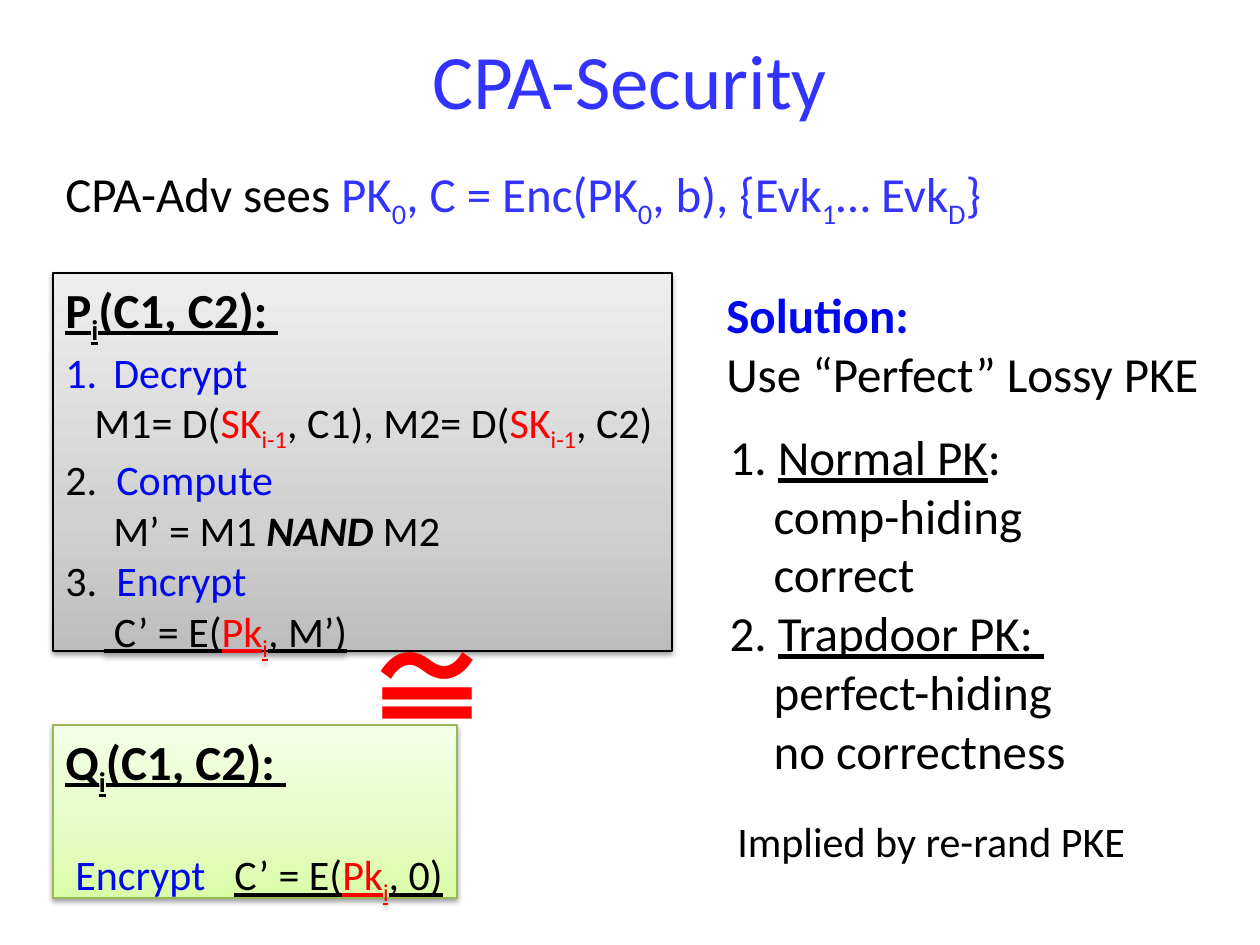
"""Build the CPA-Security slide with its two programs and the lossy PKE solution."""
from lxml import etree
from pptx import Presentation
from pptx import util as u
from pptx.dml.color import RGBColor
from pptx.enum import shapes, text
from pptx.oxml.ns import qn

PX = 914400 / 126
BLACK = RGBColor(0x00, 0x00, 0x00)
VIOLET = RGBColor(0x33, 0x33, 0xFF)
BLUE = RGBColor(0x02, 0x08, 0xEE)
RED = RGBColor(0xFF, 0x00, 0x00)
LEAF = RGBColor(0x98, 0xB9, 0x55)
GREYS = [(0, "BDBDBD"), (35, "D1D1D1"), (100, "EEEEEE")]
GREENS = [(0, "DAFDA7"), (35, "E4FCC2"), (100, "F5FFE7")]
INKS = {"v": VIOLET, "b": BLUE, "r": RED}
WIDE_SPACING = 1110

# Span marks: v, b, r = ink; s = subscript; B = bold; i = italic; u = underline; w = wide
TITLE = [dict(spans=[("CPA-Security", "v")], size=44, align=text.PP_ALIGN.CENTER)]
VIEW = [dict(spans=[("CPA-Adv sees", ""), (" PK", "v"), ("0", "vs"), (", C = Enc(PK", "v"),
                    ("0", "vs"), (", b), {Evk", "v"), ("1", "vs"), ("… Evk", "v"),
                    ("D", "vs"), ("}", "v")])]
SOLUTION = [dict(spans=[("Solution:", "bB")]),
            dict(spans=[("Use “Perfect” Lossy PKE", "")])]
KEYS = [dict(spans=[("1. ", ""), ("Normal PK", "u"), (":", "")]),
        dict(spans=[("comp-hiding", "")], left=44),
        dict(spans=[("correct", "")], left=44),
        dict(spans=[("2. ", ""), ("Trapdoor PK: ", "u")]),
        dict(spans=[("perfect-hiding", "")], left=44),
        dict(spans=[("no correctness", "")], left=44)]
REMARK = [dict(spans=[("Implied by re-rand PKE", "")], size=24)]
PROGRAM_P = [
    dict(spans=[("P", "Bu"), ("i", "Bus"), ("(C1, C2): ", "Bu")]),
    dict(spans=[("Decrypt", "b")], size=24, left=48, first=-48, numbered=True),
    dict(spans=[("M1= D(", ""), ("SK", "r"), ("i-1", "rs"), (", C1), M2= D(", ""),
                ("SK", "r"), ("i-1", "rs"), (", C2)", "")], size=24, left=29),
    dict(spans=[("2.\t", ""), ("Compute", "b")], size=24, left=51, first=-51),
    dict(spans=[("M’ = M1 ", ""), ("NAND", "Bi"), (" M2", "")], size=24, left=48),
    dict(spans=[("3.\t", ""), ("Encrypt", "b")], size=24, left=51, first=-51),
    dict(spans=[(" C’ = E(", "u"), ("Pk", "ru"), ("i", "rus"), (", M’)", "u")],
         size=24, left=39)]
PROGRAM_Q = [
    dict(spans=[("Q", "Bu"), ("i", "Bus"), ("(C1, C2): ", "Bu")]),
    dict(spans=[("Encrypt", "b"), (" ", "w"), ("C’ = E(", "u"), ("Pk", "ru"),
                ("i", "rus"), (", 0)", "u")], size=24, left=10, before=29)]
RELATION = [dict(spans=[("≅", "rB")], size=72, font="Noto Sans CJK JP")]

TEXT_BOXES = [((53, 157, 1207, 72), VIEW, True), ((714, 278, 503, 131), SOLUTION, True),
              ((725, 809, 418, 63), REMARK, True)]
PROGRAMS = [((53, 273, 619, 378), PROGRAM_P, GREYS, BLACK),
            ((53, 725, 404, 173), PROGRAM_Q, GREENS, LEAF)]


def px(length):
    return u.Emu(round(length * PX))


def child(parent, tag, **values):
    return etree.SubElement(parent, qn(tag), {key: str(value) for key, value in values.items()})


def add_para(para, spans, size=28, font="Calibri", align=text.PP_ALIGN.LEFT,
             left=0, first=0, before=0, numbered=False):
    para.alignment = align
    para.space_before = u.Pt(before)
    layout = para._p.get_or_add_pPr()
    layout.set("marL", str(px(left)))
    layout.set("indent", str(px(first)))
    if numbered:
        child(layout, "a:buFont", typeface="+mj-lt")
        child(layout, "a:buAutoNum", type="arabicPeriod")
    else:
        child(layout, "a:buNone")
    for words, marks in spans:
        span = para.add_run()
        span.text = words
        span.font.size = u.Pt(size)
        span.font.bold = "B" in marks
        span.font.italic = "i" in marks
        span.font.underline = "u" in marks
        span.font.color.rgb = next((INKS[mark] for mark in marks if mark in INKS), BLACK)
        span.font.name = font
        child(span.font._element, "a:ea", typeface=font)
        if "s" in marks:
            span.font._element.set("baseline", "-25000")
        if "w" in marks:
            span.font._element.set("spc", str(WIDE_SPACING))


def write(box, paras, wrap=True, anchor=text.MSO_ANCHOR.TOP):
    frame = box.text_frame
    frame.word_wrap = wrap
    frame.auto_size = text.MSO_AUTO_SIZE.NONE if wrap else text.MSO_AUTO_SIZE.SHAPE_TO_FIT_TEXT
    frame.vertical_anchor = anchor
    for index, content in enumerate(paras):
        add_para(frame.add_paragraph() if index else frame.paragraphs[0], **content)


def place(box, area):
    box.left, box.top, box.width, box.height = map(px, area)


def add_program(page, area, paras, stops, edge):
    box = page.shapes.add_shape(shapes.MSO_SHAPE.RECTANGLE, *map(px, area))
    box.line.color.rgb = edge
    box.line.width = u.Pt(0.75)
    box.fill.gradient()
    box.fill.gradient_angle = 90
    ramp = box._element.spPr.find(".//" + qn("a:gsLst"))
    for stop in list(ramp):
        ramp.remove(stop)
    for position, colour in stops:
        child(child(ramp, "a:gs", pos=position * 1000), "a:srgbClr", val=colour)
    box.shadow.inherit = False
    effects = box._element.spPr.find(qn("a:effectLst"))
    shade = child(effects, "a:outerShdw", blurRad=u.Pt(3.1), dist=u.Pt(1.6),
                  dir=5400000, rotWithShape=0)
    child(child(shade, "a:srgbClr", val="000000"), "a:alpha", val=38000)
    box.text_frame.margin_right = 0
    write(box, paras)


def main():
    deck = Presentation()
    deck.slide_width, deck.slide_height = px(1260), px(945)
    page = deck.slides.add_slide(deck.slide_layouts[1])
    title, body = page.placeholders
    place(title, (63, 0, 1134, 158))
    write(title, TITLE, anchor=text.MSO_ANCHOR.MIDDLE)
    place(body, (717, 420, 367, 369))
    write(body, KEYS)
    for area, paras, wrap in TEXT_BOXES:
        write(page.shapes.add_textbox(*map(px, area)), paras, wrap)
    for program in PROGRAMS:
        add_program(page, *program)
    write(page.shapes.add_textbox(*map(px, (352, 601, 89, 165))), RELATION, wrap=False)
    deck.save("out.pptx")


if __name__ == "__main__":
    main()
